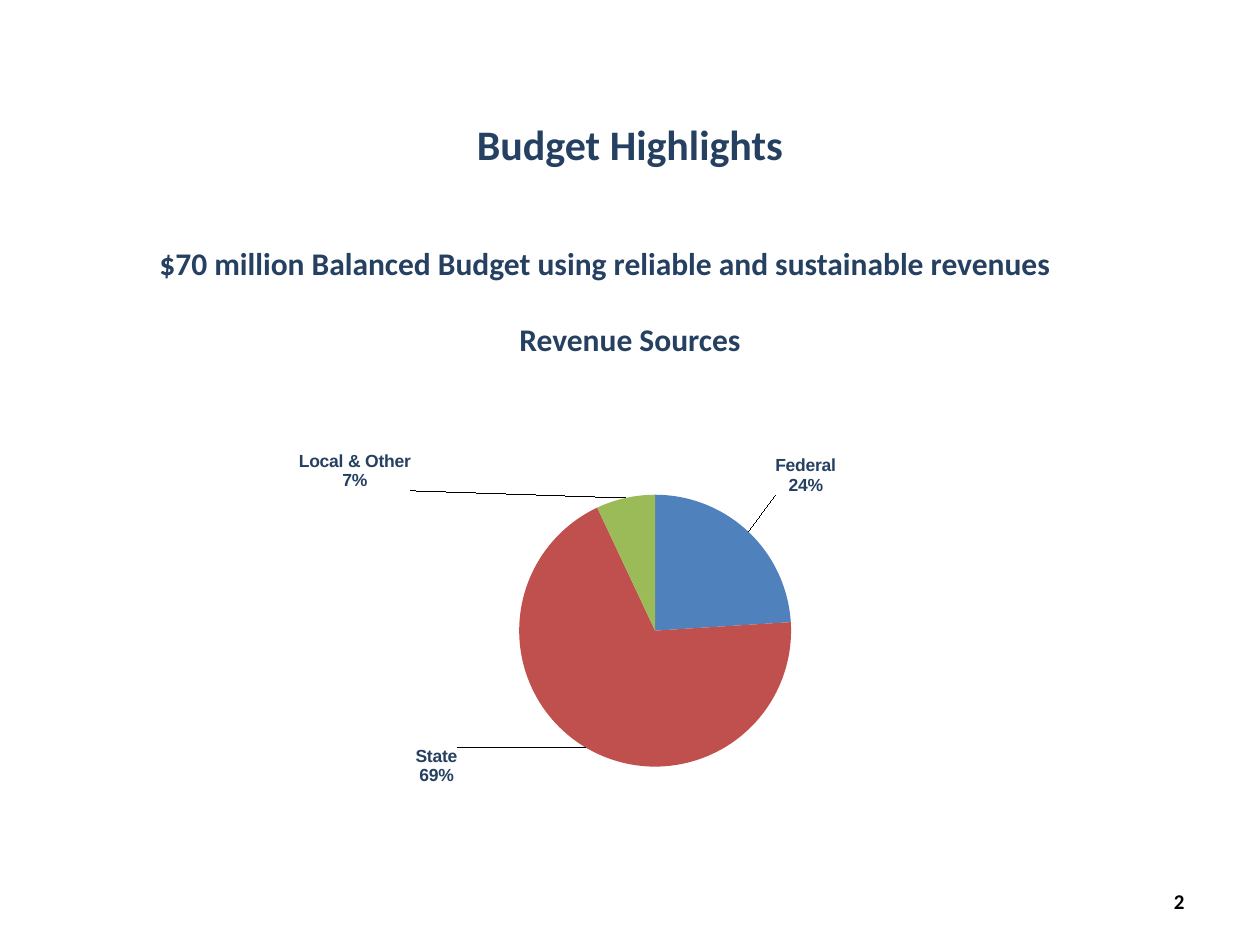
from typing import NamedTuple

from lxml import etree
from pptx import Presentation
from pptx.chart.data import CategoryChartData
from pptx.dml.color import RGBColor
from pptx.enum.chart import XL_CHART_TYPE, XL_LABEL_POSITION
from pptx.enum.text import MSO_ANCHOR, PP_ALIGN
from pptx.oxml import parse_xml
from pptx.oxml.ns import nsdecls, qn
from pptx.util import Pt

EMU_PER_PX = 914400 / 126
NAVY = RGBColor(0x25, 0x40, 0x61)
BLACK = RGBColor(0x00, 0x00, 0x00)
BLUE = RGBColor(0x4F, 0x81, 0xBD)
RED = RGBColor(0xC0, 0x50, 0x4D)
GREEN = RGBColor(0x9B, 0xBB, 0x59)
LEFT, CENTER, RIGHT = PP_ALIGN.LEFT, PP_ALIGN.CENTER, PP_ALIGN.RIGHT
TOP, MIDDLE = MSO_ANCHOR.TOP, MSO_ANCHOR.MIDDLE
PIE = XL_CHART_TYPE.PIE
OUTSIDE_END = XL_LABEL_POSITION.OUTSIDE_END


class Line(NamedTuple):
    text: str
    size: int
    align: PP_ALIGN
    color: RGBColor = NAVY
    space_before: int = 0


class TextBlock(NamedTuple):
    left: int
    top: int
    width: int
    height: int
    lines: list[Line]
    anchor: MSO_ANCHOR = TOP


class Slice(NamedTuple):
    source: str
    percent: int
    color: RGBColor
    label_dx: float
    label_dy: float


TEXT_BLOCKS = [
    TextBlock(373, 112, 514, 63, [Line("Budget Highlights", 24, CENTER)]),
    TextBlock(147, 238, 966, 127, [
        Line("$70 million Balanced Budget using reliable and sustainable revenues",
             18, LEFT),
        Line("Revenue Sources", 18, CENTER, space_before=22),
    ]),
    TextBlock(903, 876, 294, 50, [Line("2", 12, RIGHT, BLACK)], MIDDLE),
]

# Label offsets are fractions of the chart's width and height.
SLICES = [
    Slice("Federal", 24, BLUE, 0.03, -0.08),
    Slice("State", 69, RED, -0.17, -0.02),
    Slice("Local & Other", 7, GREEN, -0.29, 0),
]


def px(length: int) -> int:
    return round(length * EMU_PER_PX)


def add_text_block(slide, block: TextBlock) -> None:
    box = slide.shapes.add_textbox(px(block.left), px(block.top),
                                   px(block.width), px(block.height))
    frame = box.text_frame
    frame.word_wrap = True
    frame.vertical_anchor = block.anchor
    for index, line in enumerate(block.lines):
        para = frame.add_paragraph() if index else frame.paragraphs[0]
        para.text = line.text
        para.alignment = line.align
        if line.space_before:
            para.space_before = Pt(line.space_before)
        para.font.name = "Calibri"
        para.font.size = Pt(line.size)
        para.font.bold = True
        para.font.color.rgb = line.color


def manual_layout(values: dict[str, object]) -> etree._Element:
    entries = "".join(f'<c:{tag} val="{value}"/>' for tag, value in values.items())
    return parse_xml(f'<c:layout {nsdecls("c")}><c:manualLayout>{entries}'
                     '</c:manualLayout></c:layout>')


def show_source_and_percent(labels: etree._Element) -> None:
    """Show category name above percentage in a label element."""
    for tag, shown in (("showVal", 0), ("showCatName", 1), ("showPercent", 1)):
        labels.find(qn(f"c:{tag}")).set("val", str(shown))
    separator = etree.Element(qn("c:separator"))
    separator.text = "\n"
    labels.find(qn("c:showPercent")).getnext().addnext(separator)


def style_label_font(font) -> None:
    font.name = "Arial"
    font.size = Pt(10)
    font.bold = True
    font.color.rgb = NAVY


def add_revenue_pie(slide) -> None:
    data = CategoryChartData()
    data.categories = [part.source for part in SLICES]
    data.add_series("Series 1", [part.percent for part in SLICES])
    chart = slide.shapes.add_chart(PIE, px(284), px(431), px(735), px(388), data).chart
    chart.has_legend = False
    chart.has_title = False
    chart.font.name = "Arial"
    chart.font.size = Pt(10)

    plot = chart.plots[0]
    plot.vary_by_categories = True
    plot_area = chart._chartSpace.chart.plotArea
    for old_layout in plot_area.findall(qn("c:layout")):
        plot_area.remove(old_layout)
    plot_area.insert(0, manual_layout({
        "layoutTarget": "inner", "xMode": "edge", "yMode": "edge",
        "x": 0.32, "y": 0.16, "w": 0.37, "h": 0.71}))

    series = plot.series[0]
    for index, part in enumerate(SLICES):
        point = series.points[index]
        point.format.fill.solid()
        point.format.fill.fore_color.rgb = part.color
        point.format.line.fill.background()
        label = point.data_label
        style_label_font(label.font)
        label.position = OUTSIDE_END
        element = series.data_labels._element.findall(qn("c:dLbl"))[index]
        element.find(qn("c:idx")).addnext(
            manual_layout({"x": part.label_dx, "y": part.label_dy}))
        show_source_and_percent(element)
    style_label_font(series.data_labels.font)
    show_source_and_percent(series.data_labels._element)


def main() -> None:
    deck = Presentation()
    deck.slide_width, deck.slide_height = px(1260), px(945)
    slide = deck.slides.add_slide(deck.slide_layouts[6])
    for block in TEXT_BLOCKS:
        add_text_block(slide, block)
    add_revenue_pie(slide)
    deck.save("out.pptx")


if __name__ == "__main__":
    main()
